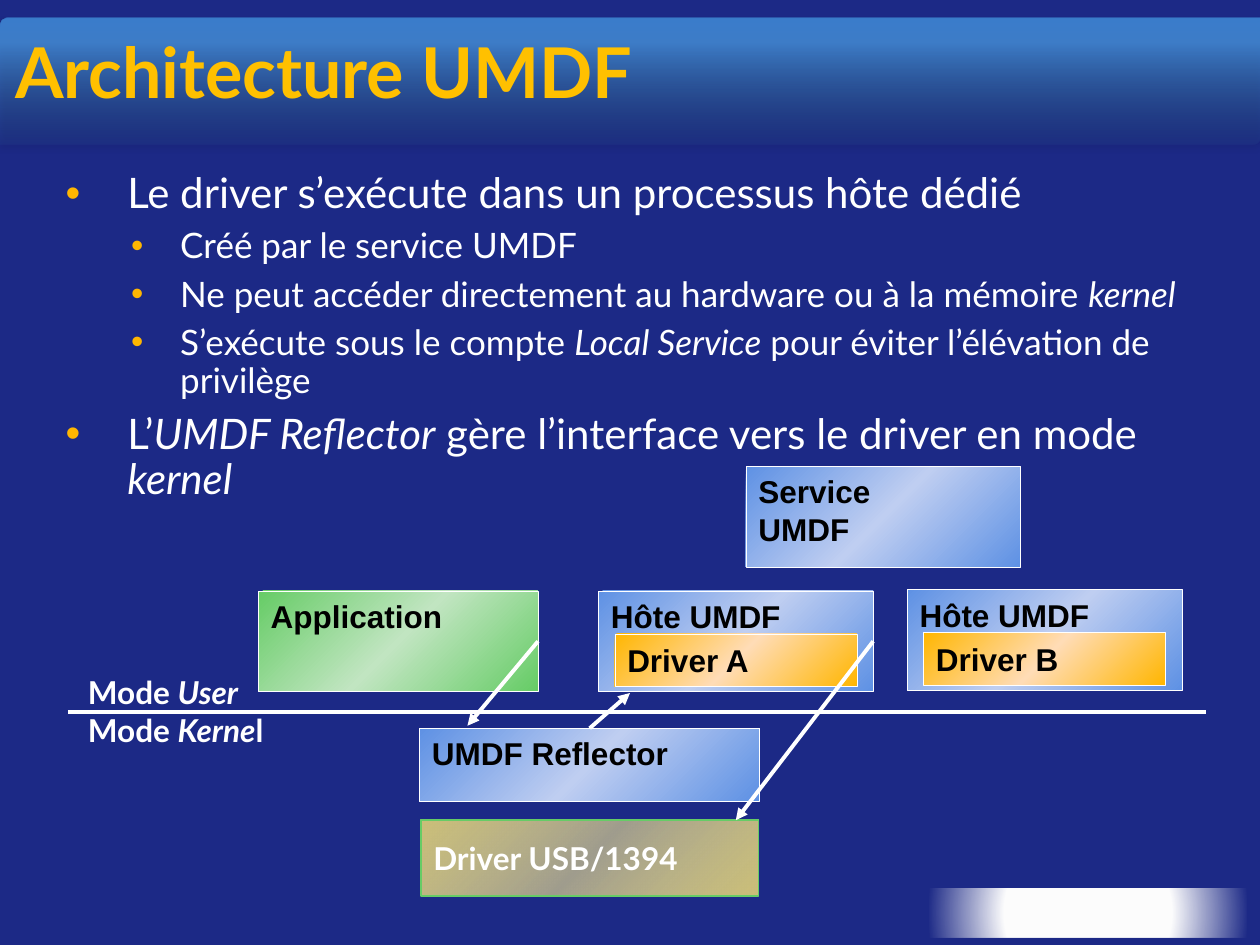
from lxml.etree import SubElement
from pptx import Presentation
from pptx.dml.color import RGBColor
from pptx.enum.shapes import MSO_CONNECTOR, MSO_SHAPE
from pptx.enum.text import MSO_ANCHOR, MSO_AUTO_SIZE, PP_ALIGN
from pptx.oxml.ns import qn
from pptx.util import Inches, Pt

WHITE, BLACK, GOLD = "FFFFFF", "000000", "FFB601"
BLUE = [(0, "5E91E4", 100), (50, "BFCEF1", 100), (100, "5E91E4", 100)]
GREEN = [(0, "66CC66", 100), (50, "C1E5C1", 100), (100, "66CC66", 100)]
ORANGE = [(0, GOLD, 100), (50, "FFDCB6", 100), (100, GOLD, 100)]
KHAKI = [(0, "CBBF79", 100), (50, "F7E993", 60), (100, "CBBF79", 100)]
HEADER = [(0, "2F5F99", 13), (80, "3D7CC7", 100), (100, "3A7CCB", 100)]
GLOW = [(52, "FEFEFE", 100), (100, WHITE, 0), (100, "7F7F7F", 100)]

TITLE = "Architecture UMDF"
BULLETS = [
    (0, [("Le driver s’exécute dans un processus hôte dédié", False)]),
    (1, [("Créé par le service UMDF", False)]),
    (1, [("Ne peut accéder directement au hardware ou à la mémoire ", False), ("kernel", True)]),
    (1, [("S’exécute sous le compte ", False), ("Local Service", True),
         (" pour éviter l’élévation de privilège", False)]),
    (0, [("L’", False), ("UMDF Reflector", True),
         (" gère l’interface vers le driver en mode ", False), ("kernel", True)]),
]
LEVELS = [(24, 0.49, 0.49, 7), (20, 0.91, 0.39, 6)]
MODES = [[("Mode ", False), ("User", True)],
         [("Mode ", False), ("Kerne", True), ("l", False)]]
HOST_SIZE, DRIVER_SIZE = (2.18, 0.8), (1.92, 0.42)
HOSTS = [("A", 4.75, 4.69), ("B", 7.2, 4.68)]
DRIVER_OFFSET = (0.13, 0.34)


def color(value):
    return RGBColor.from_string(value)


def set_gradient(shape, stops, angle=None):
    properties = shape._element.spPr
    gradient = properties.makeelement(qn("a:gradFill"), {"rotWithShape": "1"})
    stop_list = SubElement(gradient, qn("a:gsLst"))
    for position, value, opacity in stops:
        stop = SubElement(stop_list, qn("a:gs"), pos=str(position * 1000))
        tint = SubElement(stop, qn("a:srgbClr"), val=value)
        if opacity < 100:
            SubElement(tint, qn("a:alpha"), val=str(opacity * 1000))
    if angle is None:
        path = SubElement(gradient, qn("a:path"), {"path": "circle"})
        SubElement(path, qn("a:fillToRect"), l="50000", t="50000", r="50000", b="50000")
    else:
        SubElement(gradient, qn("a:lin"), ang=str(angle * 60000), scaled="0")
    properties.find(qn("a:prstGeom")).addnext(gradient)


def add_panel(slide, position, size, stops, angle=45, kind=MSO_SHAPE.RECTANGLE):
    shape = slide.shapes.add_shape(kind, *map(Inches, position + size))
    shape.shadow.inherit = False
    shape.line.fill.background()
    set_gradient(shape, stops, angle)
    return shape


def write(frame, paragraphs, font_name, font_color, size=18, bold=True):
    frame.word_wrap = True
    for index, runs in enumerate(paragraphs):
        paragraph = frame.paragraphs[0] if index == 0 else frame.add_paragraph()
        paragraph.alignment = PP_ALIGN.LEFT
        font = paragraph.font
        font.name, font.size, font.bold = font_name, Pt(size), bold
        font.color.rgb = color(font_color)
        for text, italic in runs:
            run = paragraph.add_run()
            run.text = text
            if italic:
                run.font.italic = True


def add_box(slide, lines, position, size, stops, anchor=MSO_ANCHOR.TOP,
            line=(WHITE, 0.25), font=("Arial", BLACK)):
    box = add_panel(slide, position, size, stops)
    box.line.color.rgb = color(line[0])
    box.line.width = Pt(line[1])
    box.text_frame.vertical_anchor = anchor
    write(box.text_frame, [[(text, False)] for text in lines], *font)
    return box


def add_line(slide, start, end, source=None, site=None, arrow=True):
    line = slide.shapes.add_connector(MSO_CONNECTOR.STRAIGHT, *map(Inches, start + end))
    if source is not None:
        line.begin_connect(source, site)
    line.line.color.rgb = color(WHITE)
    line.line.width = Pt(2.25)
    if arrow:
        SubElement(line.line._get_or_add_ln(), qn("a:tailEnd"), type="triangle")
    SubElement(line._element.spPr, qn("a:effectLst"))


def place(shape, left, top, width, height):
    shape.left, shape.top = Inches(left), Inches(top)
    shape.width, shape.height = Inches(width), Inches(height)
    shape.text_frame.vertical_anchor = MSO_ANCHOR.TOP
    shape.text_frame.auto_size = MSO_AUTO_SIZE.NONE


def add_header(slide):
    header = add_panel(slide, (0, 0.14), (10, 1.01), HEADER, 270,
                       MSO_SHAPE.ROUND_2_DIAG_RECTANGLE)
    header.adjustments[0], header.adjustments[1] = 0.07, 0
    effects = header._element.spPr.find(qn("a:effectLst"))
    shadow = SubElement(effects, qn("a:outerShdw"), blurRad=str(Pt(3.1)),
                        dist=str(Pt(1.8)), dir="5400000", rotWithShape="0")
    tint = SubElement(shadow, qn("a:srgbClr"), val=BLACK)
    SubElement(tint, qn("a:alpha"), val="35000")
    slide.shapes._spTree.insert(2, header._element)


def fill_title(title):
    place(title, 0.02, 0.25, 9.16, 0.71)
    write(title.text_frame, [[(TITLE, False)]], "Lato", "FFC000", 40)
    title.text_frame.paragraphs[0].line_spacing = 0.9


def fill_body(body):
    place(body, 0.42, 1.32, 9.2, 2.83)
    frame = body.text_frame
    frame.word_wrap = True
    for index, (level, runs) in enumerate(BULLETS):
        size, margin, hanging, gap = LEVELS[level]
        paragraph = frame.paragraphs[0] if index == 0 else frame.add_paragraph()
        paragraph.level = level
        properties = paragraph._p.get_or_add_pPr()
        properties.set("marL", str(Inches(margin)))
        properties.set("indent", str(-Inches(hanging)))
        SubElement(SubElement(properties, qn("a:buClr")), qn("a:srgbClr"), val=GOLD)
        SubElement(properties, qn("a:buFont"), typeface="Arial")
        SubElement(properties, qn("a:buChar"), char="•")
        paragraph.line_spacing = 0.9
        paragraph.space_before = Pt(gap if index else 0)
        font = paragraph.font
        font.name, font.size = "Lato", Pt(size)
        font.color.rgb = color(WHITE)
        for text, italic in runs:
            run = paragraph.add_run()
            run.text = text
            if italic:
                run.font.italic = True


def add_diagram(slide):
    application = add_box(slide, ["Application"], (2.05, 4.69), (2.22, 0.8), GREEN)
    hosts = []
    for letter, left, top in HOSTS:
        hosts.append(add_box(slide, ["Hôte UMDF"], (left, top), HOST_SIZE, BLUE))
        corner = (left + DRIVER_OFFSET[0], top + DRIVER_OFFSET[1])
        add_box(slide, [f"Driver {letter}"], corner, DRIVER_SIZE, ORANGE, MSO_ANCHOR.MIDDLE)
    add_box(slide, ["Service", "UMDF"], (5.92, 3.7), HOST_SIZE, BLUE)
    add_box(slide, ["Driver USB/1394"], (3.34, 6.51), (2.68, 0.6), KHAKI,
            MSO_ANCHOR.MIDDLE, ("66CC66", 1), ("Lato", WHITE))
    reflector = add_box(slide, ["UMDF Reflector"], (3.33, 5.78), (2.7, 0.58), BLUE)

    add_line(slide, (0.54, 5.65), (9.57, 5.65), arrow=False)
    modes = slide.shapes.add_textbox(*map(Inches, (0.6, 5.29, 1.63, 0.68)))
    write(modes.text_frame, MODES, "Lato", WHITE)
    add_line(slide, (3.16, 5.49), (3.71, 5.76), application, 3)
    add_line(slide, (4.68, 5.78), (5, 5.5), reflector, 0)
    add_line(slide, (5.84, 5.49), (5.84, 6.51), hosts[0], 3)


def main():
    presentation = Presentation()
    presentation.slide_width, presentation.slide_height = Inches(10), Inches(7.5)
    slide = presentation.slides.add_slide(presentation.slide_layouts[1])
    slide.background.fill.solid()
    slide.background.fill.fore_color.rgb = color("1C2986")
    add_header(slide)
    fill_title(slide.shapes.title)
    fill_body(slide.placeholders[1])
    add_panel(slide, (7.38, 7.05), (2.51, 0.39), GLOW, None)
    add_diagram(slide)
    presentation.save("out.pptx")


if __name__ == "__main__":
    main()
